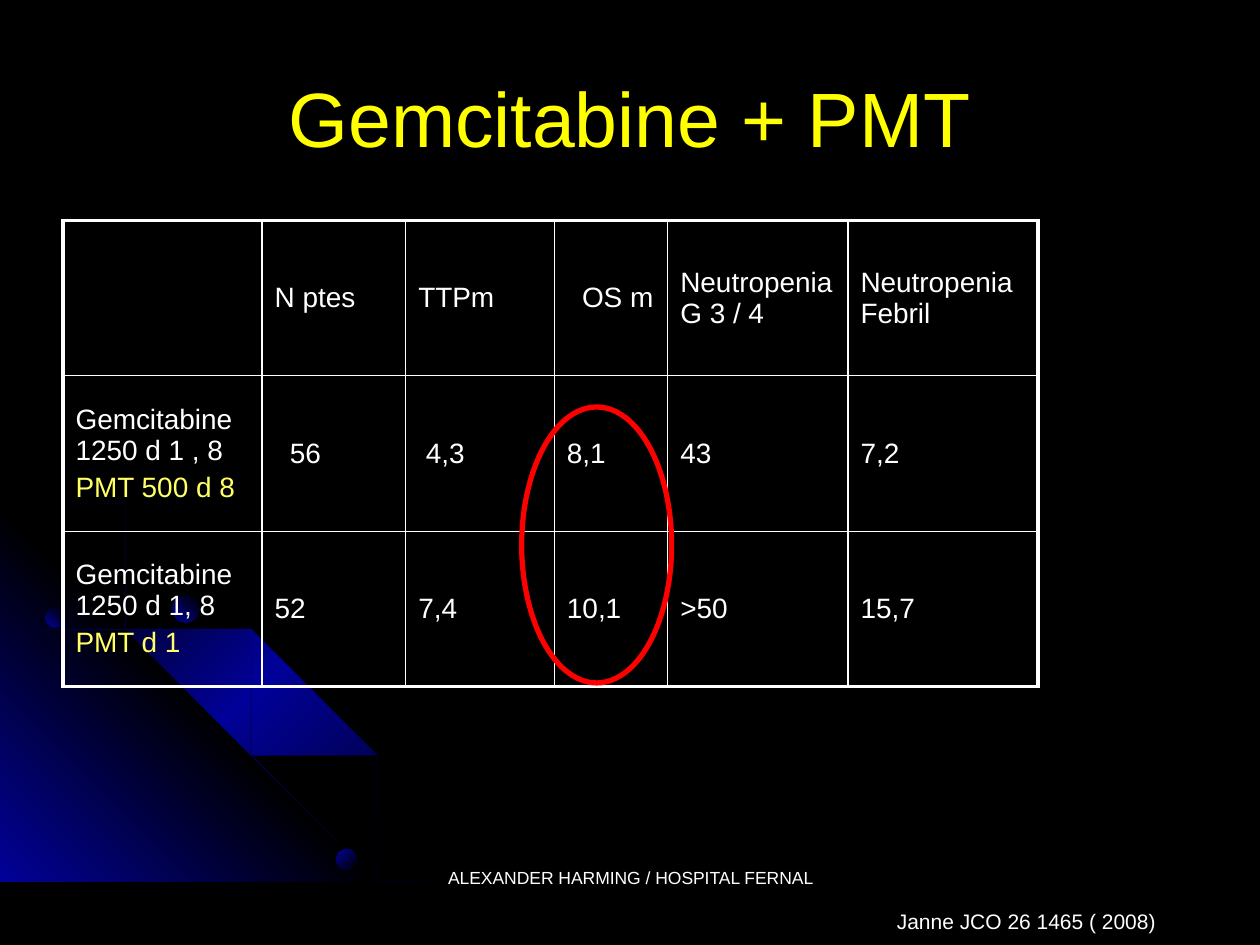
import pptx
import pptx.util
import pptx.dml.color
import pptx.enum.shapes
import pptx.enum.text
import pptx.oxml.ns
from lxml import etree

Inches, Pt = pptx.util.Inches, pptx.util.Pt
qn = pptx.oxml.ns.qn
Align = pptx.enum.text.PP_ALIGN
Anchor = pptx.enum.text.MSO_ANCHOR
OVAL = pptx.enum.shapes.MSO_SHAPE.OVAL

THEME = dict(font="Arial", back="000000", glow="010199", title="FFFF00", text="FFFFFF",
             accent="FFFF66", ring="FF0000", title_size=44, cell_size=16,
             source_size=12, footer_size=10, outer_line=2.25, inner_line=1, ring_line=3)

# Content
TITLE = "Gemcitabine + PMT"
ROWS = [
    ["", "N ptes", "TTPm", "OS m", "Neutropenia G 3 / 4", "Neutropenia Febril"],
    [["Gemcitabine 1250 d 1 , 8", "PMT 500 d 8"], "56", "4,3", "8,1", "43", "7,2"],
    [["Gemcitabine 1250 d 1, 8", "PMT d 1"], "52", "7,4", "10,1", ">50", "15,7"],
]
INDENTS = {(0, 3): 0.12, (1, 1): 0.12, (1, 2): 0.06}
COLUMN_WIDTHS = [1.58, 1.14, 1.18, 0.9, 1.43, 1.51]
ROW_HEIGHTS = [1.23, 1.24, 1.23]
SOURCE = "Janne JCO 26 1465 ( 2008)"
FOOTER = "ALEXANDER HARMING / HOSPITAL FERNAL"

# Decoration: upper edge of each arc, the corner glow, and dots (left, top, size, angle)
ARC_WIDTH = 0.02
ARCS = [
    [(0, 4.35), (0.28, 4.41), (0.57, 4.47), (0.98, 4.59), (1.36, 4.77), (1.74, 4.97),
     (2.09, 5.21), (2.42, 5.48), (2.72, 5.78), (3, 6.11), (3.25, 6.48), (3.39, 6.73),
     (3.52, 6.98), (3.62, 7.23), (3.72, 7.49)],
    [(0, 4.75), (0.41, 4.88), (0.79, 5.05), (1.17, 5.26), (1.52, 5.49), (1.84, 5.76),
     (2.15, 6.06), (2.42, 6.4), (2.66, 6.76), (2.86, 7.12), (2.96, 7.3), (3.03, 7.49)],
    [(0, 4.42), (0.39, 4.55), (0.76, 4.73), (1.11, 4.93), (1.44, 5.16), (1.75, 5.43),
     (2.04, 5.73), (2.29, 6.03), (2.54, 6.39), (2.69, 6.65), (2.82, 6.93), (2.94, 7.2),
     (3.03, 7.49)],
]
CORNER = [(0, 4.27), (3.22, 7.49), (0, 7.49)]
DOTS = [(0.36, 4.83, 0.15, 315), (2.67, 6.74, 0.16, 45), (1.37, 4.73, 0.21, 315)]


def rgb(name):
    return pptx.dml.color.RGBColor.from_string(THEME[name])


def write(para, text, size, color="text", align=None, before=0, indent=0):
    span = para.add_run()
    span.text = text
    span.font.name = THEME["font"]
    span.font.size = Pt(THEME[size])
    span.font.color.rgb = rgb(color)
    para.alignment = align
    para.space_before = Pt(before)
    if indent:
        properties = para._p.get_or_add_pPr()
        properties.set("marL", str(Inches(indent)))
        properties.set("indent", "0")


def add_text(page, place, text, size, align=None):
    box = page.shapes.add_textbox(*map(Inches, place))
    box.text_frame.word_wrap = True
    write(box.text_frame.paragraphs[0], text, size, align=align)


def fill_gradient(shape, names, angle):
    """Spread the named colours evenly; the angle runs clockwise."""
    shape.shadow.inherit = False
    shape.line.fill.background()
    shape.fill.gradient()
    shape.fill.gradient_angle = 360 - angle
    stops = shape._element.spPr.find(qn("a:gradFill")).find(qn("a:gsLst"))
    for stop in list(stops):
        stops.remove(stop)
    for i, name in enumerate(names):
        stop = etree.SubElement(stops, qn("a:gs"), pos=str(100000 * i // (len(names) - 1)))
        etree.SubElement(stop, qn("a:srgbClr"), val=THEME[name])


def add_outline(page, points, names, angle):
    builder = page.shapes.build_freeform(*points[0], scale=Inches(1))
    builder.add_line_segments(points[1:], close=True)
    fill_gradient(builder.convert_to_shape(), names, angle)


def add_decoration(page):
    def add_arc(edge):
        lower = [(max(x - ARC_WIDTH, 0), min(y + ARC_WIDTH, 7.49)) for x, y in edge]
        add_outline(page, edge + lower[::-1], ["back", "glow", "back"], 45)

    add_arc(ARCS[0])
    add_outline(page, CORNER, ["glow", "back", "glow"], 315)
    for edge in ARCS[1:]:
        add_arc(edge)
    for left, top, size, angle in DOTS:
        dot = page.shapes.add_shape(OVAL, *map(Inches, (left, top, size, size)))
        fill_gradient(dot, ["glow", "back"], angle)


def set_borders(cell, outer_sides):
    properties = cell._tc.get_or_add_tcPr()
    for i, side in enumerate("LRTB"):
        width = THEME["outer_line" if side in outer_sides else "inner_line"]
        line = etree.Element(qn("a:ln" + side), w=str(Pt(width)))
        solid = etree.SubElement(line, qn("a:solidFill"))
        etree.SubElement(solid, qn("a:srgbClr"), val=THEME["text"])
        properties.insert(i, line)


def add_results(page):
    last_row, last_column = len(ROWS) - 1, len(COLUMN_WIDTHS) - 1
    table = page.shapes.add_table(
        len(ROWS), len(COLUMN_WIDTHS), Inches(0.5), Inches(1.75),
        Inches(sum(COLUMN_WIDTHS)), Inches(sum(ROW_HEIGHTS))).table
    table.first_row = table.horz_banding = False
    for column, width in zip(table.columns, COLUMN_WIDTHS):
        column.width = Inches(width)
    for row, height in zip(table.rows, ROW_HEIGHTS):
        row.height = Inches(height)
    for r, values in enumerate(ROWS):
        for c, value in enumerate(values):
            cell = table.cell(r, c)
            cell.fill.background()
            cell.vertical_anchor = Anchor.MIDDLE
            edges = {"L": c == 0, "R": c == last_column, "T": r == 0, "B": r == last_row}
            set_borders(cell, [side for side, outer in edges.items() if outer])
            lines = value if isinstance(value, list) else [value]
            for i, line in enumerate(lines):
                if not line:
                    continue
                para = cell.text_frame.add_paragraph() if i else cell.text_frame.paragraphs[0]
                write(para, line, "cell_size", color="accent" if i else "text",
                      align=Align.JUSTIFY, before=3.5, indent=INDENTS.get((r, c), 0))


def main():
    deck = pptx.Presentation()
    deck.slide_width, deck.slide_height = Inches(10), Inches(7.5)
    page = deck.slides.add_slide(deck.slide_layouts[5])
    page.background.fill.solid()
    page.background.fill.fore_color.rgb = rgb("back")
    add_decoration(page)

    # Title
    title = page.shapes.title
    title.left, title.top, title.width, title.height = map(Inches, (0.5, 0.3, 9, 1.25))
    title.text_frame.vertical_anchor = Anchor.MIDDLE
    write(title.text_frame.paragraphs[0], TITLE, "title_size", color="title", align=Align.CENTER)

    # Results, source, survival ring and footer
    add_results(page)
    add_text(page, (7.02, 7.16, 2.57, 0.3), SOURCE, "source_size")
    ring = page.shapes.add_shape(OVAL, *map(Inches, (4.14, 3.23, 1.19, 2.19)))
    ring.shadow.inherit = False
    ring.fill.background()
    ring.line.color.rgb = rgb("ring")
    ring.line.width = Pt(THEME["ring_line"])
    add_text(page, (3.42, 6.83, 3.17, 0.5), FOOTER, "footer_size", align=Align.CENTER)
    deck.save("out.pptx")


if __name__ == "__main__":
    main()
